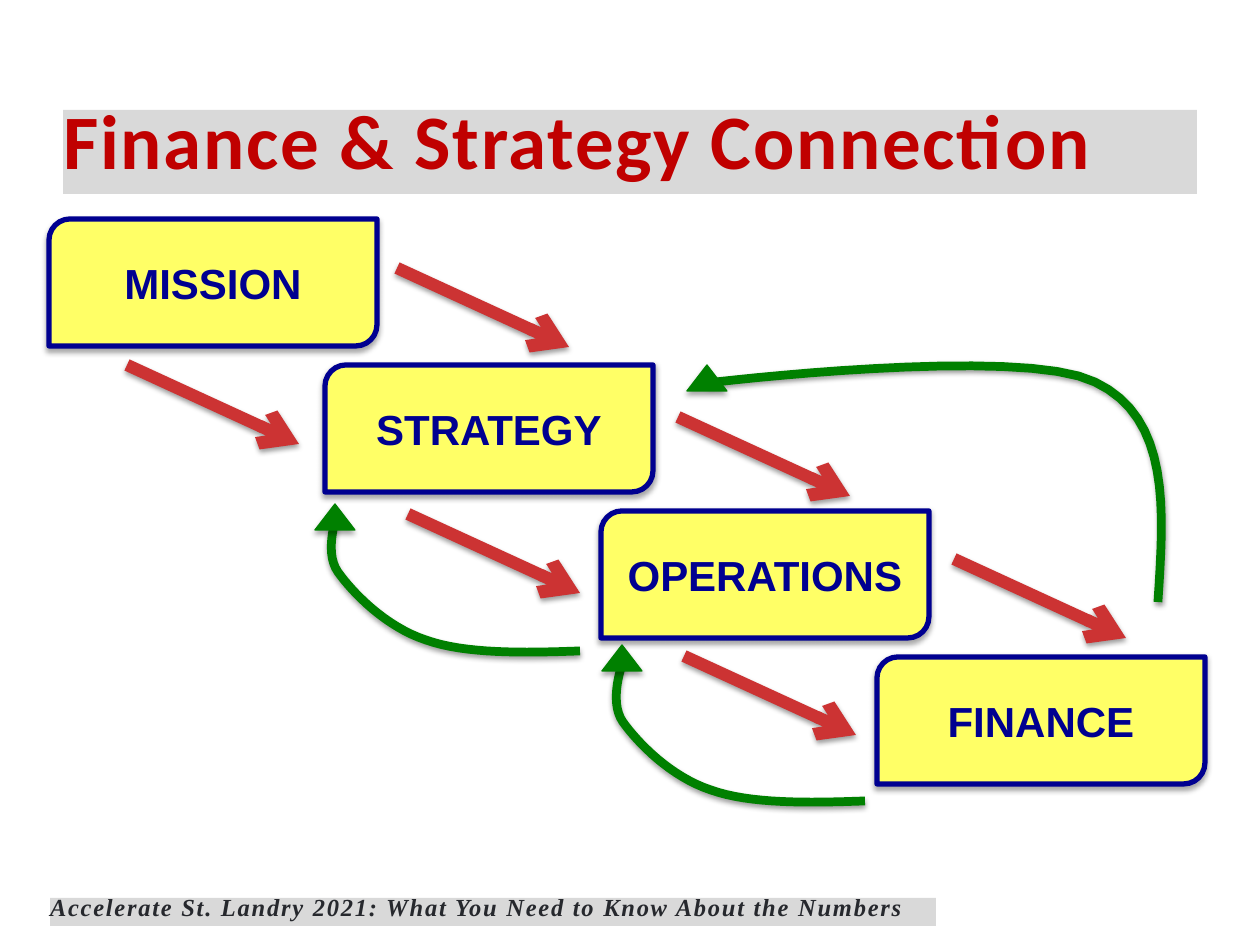
from pptx import Presentation
from pptx.dml.color import RGBColor
from pptx.enum.shapes import MSO_CONNECTOR, MSO_SHAPE
from pptx.enum.text import MSO_ANCHOR, MSO_AUTO_SIZE, PP_ALIGN
from pptx.oxml import parse_xml
from pptx.oxml.ns import nsdecls
from pptx.util import Inches, Pt

YELLOW = RGBColor(0xFF, 0xFF, 0x66)
NAVY = RGBColor(0x00, 0x00, 0x90)
RED = RGBColor(0xCC, 0x33, 0x33)
GREEN = RGBColor(0x00, 0x80, 0x00)
GRAY = RGBColor(0xD9, 0xD9, 0xD9)
CRIMSON = RGBColor(0xC0, 0x00, 0x00)
INK = RGBColor(0x26, 0x28, 0x2D)

SCALE = 914400 / 126  # EMU in one px


def px(*vals):
    return [round(v * SCALE) for v in vals]


def shade(shape, alpha=38, dist=1.6):
    """Give a shape a soft shadow that falls straight down."""
    shape._element.spPr.append(parse_xml(
        f'<a:effectLst {nsdecls("a")}><a:outerShdw blurRad="{Pt(3.1)}" '
        f'dist="{Pt(dist)}" dir="5400000" rotWithShape="0">'
        f'<a:srgbClr val="000000"><a:alpha val="{alpha * 1000}"/></a:srgbClr>'
        '</a:outerShdw></a:effectLst>'))


def stroke(shape, color, width):
    shape.line.color.rgb = color
    shape.line.width = Pt(width)


def style(para, name, size, color, italic=False):
    font = para.font
    font.name, font.size, font.bold = name, Pt(size), True
    font.italic = italic
    font.color.rgb = color


def solid(slide, kind, box, fill, edge, width):
    shape = slide.shapes.add_shape(kind, *px(*box))
    shape.fill.solid()
    shape.fill.fore_color.rgb = fill
    stroke(shape, edge, width)
    shade(shape, 35, 1.8)
    return shape


def add_stage(slide, box, label):
    shape = solid(slide, MSO_SHAPE.ROUND_2_DIAG_RECTANGLE, box, YELLOW, NAVY, 3)
    frame = shape.text_frame
    frame.vertical_anchor = MSO_ANCHOR.MIDDLE
    para = frame.paragraphs[0]
    para.text = label
    para.alignment = PP_ALIGN.CENTER
    style(para, "Arial", 24, NAVY)


def add_arrow(slide, x, y, run=172, rise=79):
    line = slide.shapes.add_connector(
        MSO_CONNECTOR.STRAIGHT, *px(x, y, x + run, y + rise))
    stroke(line, RED, 7)
    line.line._get_or_add_ln().append(
        parse_xml(f'<a:tailEnd {nsdecls("a")} type="arrow"/>'))
    shade(line)


def trace(points, steps=16):
    """Points along joined cubic curves: a start, then three per curve."""
    path = [points[0]]
    for i in range(0, len(points) - 1, 3):
        ends = points[i:i + 4]
        for n in range(1, steps + 1):
            t = n / steps
            mix = ((1 - t) ** 3, 3 * t * (1 - t) ** 2, 3 * t * t * (1 - t), t ** 3)
            path.append(tuple(sum(m * p[k] for m, p in zip(mix, ends))
                              for k in (0, 1)))
    return path


def add_loop(slide, x, y, points, tip):
    """Feedback curve offset by x, y, with a triangle head at tip."""
    path = [px(x + a, y + b) for a, b in trace(points)]
    build = slide.shapes.build_freeform(*path[0])
    build.add_line_segments(path[1:], close=False)
    curve = build.convert_to_shape()
    curve.fill.background()
    stroke(curve, GREEN, 5)
    shade(curve)
    solid(slide, MSO_SHAPE.ISOSCELES_TRIANGLE, (*tip, 40, 26), GREEN, GREEN, 0.75)


def add_band(shape, box, text, name, size, color, italic=False):
    """Gray strip with one line of spaced text."""
    shape.left, shape.top, shape.width, shape.height = px(*box)
    shape.fill.solid()
    shape.fill.fore_color.rgb = GRAY
    frame = shape.text_frame
    frame.word_wrap = True
    frame.auto_size = MSO_AUTO_SIZE.NONE
    frame.vertical_anchor = MSO_ANCHOR.TOP
    frame.margin_left = frame.margin_right = 0
    frame.margin_top = frame.margin_bottom = 0
    para = frame.paragraphs[0]
    para.text = text
    para.alignment = PP_ALIGN.LEFT
    para.line_spacing = 0.8
    style(para, name, size, color, italic)
    para.runs[0]._r.get_or_add_rPr().set("spc", "100")


def add_flow(slide, x, y):
    # Stages step down to the right
    for i, label in enumerate(("MISSION", "STRATEGY", "OPERATIONS", "FINANCE")):
        add_stage(slide, (x + 276 * i, y + 146 * i, 328, 127), label)

    # Two arrows lead from each stage to the next
    for a, b in ((78, 146), (359, 295), (635, 437)):
        add_arrow(slide, x + a, y + b)
        add_arrow(slide, x + a + 270, y + b - 97)

    # Feedback: finance to strategy, then one stage back each
    wide = [(1109, 383), (1115, 291), (1122, 199), (1046, 163),
            (972, 126), (658, 164), (658, 164)]
    add_loop(slide, x, y, wide, (x + 638, y + 146))
    back = [(531, 432), (474, 434), (416, 435), (377, 421),
            (337, 408), (304, 374), (289, 353),
            (274, 332), (289, 293), (289, 293)]
    add_loop(slide, x, y, back, (x + 266, y + 285))
    add_loop(slide, x + 285, y + 150, back, (x + 553, y + 426))


def main():
    deck = Presentation()
    deck.slide_width, deck.slide_height = Inches(10), Inches(7.5)
    slide = deck.slides.add_slide(deck.slide_layouts[5])
    add_flow(slide, 49, 219)
    add_band(slide.shapes.title, (63, 110, 1134, 84),
             "Finance & Strategy Connection", "Calibri", 44, CRIMSON)
    foot = slide.shapes.add_textbox(0, 0, 0, 0)
    add_band(foot, (50, 898, 886, 28),
             "Accelerate St. Landry 2021: What You Need to Know About the Numbers",
             "Times New Roman", 14, INK, italic=True)
    deck.save("out.pptx")


if __name__ == "__main__":
    main()
